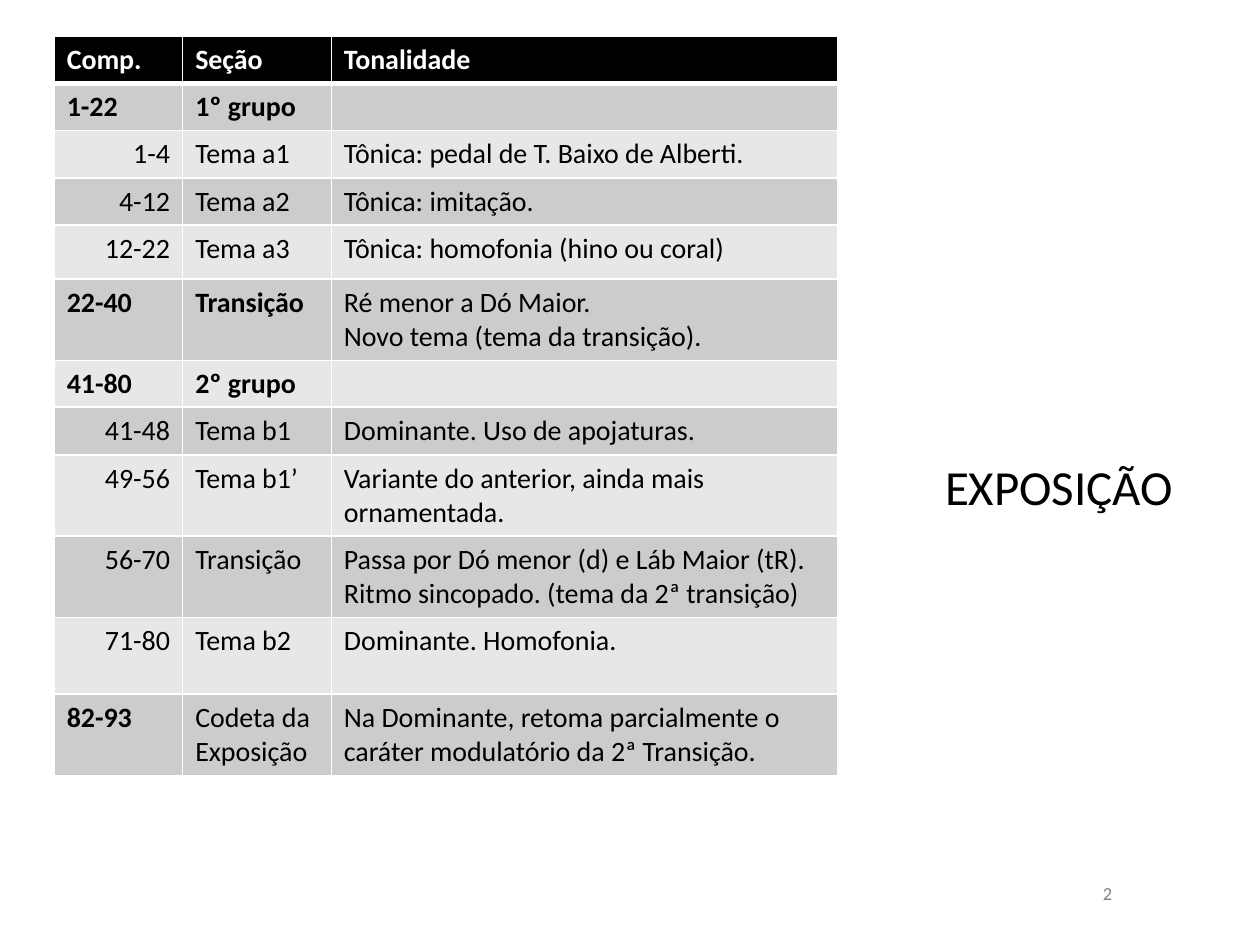
from lxml import etree
from pptx import Presentation
from pptx.dml.color import RGBColor
from pptx.enum.text import MSO_ANCHOR, PP_ALIGN
from pptx.oxml.ns import qn
from pptx.util import Inches, Pt

LEFT, CENTER, RIGHT = PP_ALIGN.LEFT, PP_ALIGN.CENTER, PP_ALIGN.RIGHT
MIDDLE = MSO_ANCHOR.MIDDLE

COLUMN_WIDTHS = [1.02, 1.18, 4.02]
HEADER = ("Comp.", "Seção", "Tonalidade")
SECTIONS = [
    (0.36, "1-22", "1º grupo", ""),
    (0.38, "1-4", "Tema a1", "Tônica: pedal de T. Baixo de Alberti."),
    (0.36, "4-12", "Tema a2", "Tônica: imitação."),
    (0.43, "12-22", "Tema a3", "Tônica: homofonia (hino ou coral)"),
    (0.6, "22-40", "Transição", "Ré menor a Dó Maior.\nNovo tema (tema da transição)."),
    (0.36, "41-80", "2º grupo", ""),
    (0.38, "41-48", "Tema b1", "Dominante. Uso de apojaturas."),
    (0.55, "49-56", "Tema b1’", "Variante do anterior, ainda mais ornamentada."),
    (0.61, "56-70", "Transição",
     "Passa por Dó menor (d) e Láb Maior (tR). Ritmo sincopado. (tema da 2ª transição)"),
    (0.61, "71-80", "Tema b2", "Dominante. Homofonia."),
    (0.61, "82-93", "Codeta da Exposição",
     "Na Dominante, retoma parcialmente o caráter modulatório da 2ª Transição."),
]
MAIN_SECTIONS = {"1-22", "22-40", "41-80", "82-93"}
BOLD_NAMES = {"1-22", "22-40", "41-80"}


def color(value):
    return RGBColor.from_string(value)


class SlideBuilder:
    font = "Calibri"
    black, white, gray = "000000", "FFFFFF", "808080"
    bands = ("CCCCCC", "E7E7E7")
    table_size = 16

    def __init__(self, page):
        self.page = page

    def set_text(self, frame, text, size, ink, align=LEFT, bold=False):
        frame.text = text
        for para in frame.paragraphs:
            para.alignment = align
            for span in para.runs:
                span.font.name = self.font
                span.font.size = Pt(size)
                span.font.bold = bold
                span.font.color.rgb = color(ink)
            if not para.runs:
                etree.SubElement(para._p, qn("a:endParaRPr"), sz=str(size * 100))

    def title(self, text, left, top, width, height):
        title = self.page.shapes.title
        title.left, title.top = Inches(left), Inches(top)
        title.width, title.height = Inches(width), Inches(height)
        frame = title.text_frame
        frame.vertical_anchor = MIDDLE
        frame.margin_top = Inches(0.52)
        self.set_text(frame, text, 28, self.black, RIGHT)

    def label(self, text, left, top, width, height):
        box = self.page.shapes.add_textbox(
            Inches(left), Inches(top), Inches(width), Inches(height))
        frame = box.text_frame
        frame.word_wrap = True
        frame.vertical_anchor = MIDDLE
        frame.margin_left = frame.margin_right = 0
        frame.margin_top = frame.margin_bottom = 0
        self.set_text(frame, text, 10.5, self.gray, CENTER)

    def borders(self, cell, top, bottom):
        properties = cell._tc.get_or_add_tcPr()
        widths = {"lnL": 1, "lnR": 1, "lnT": top, "lnB": bottom}
        for position, (side, width) in enumerate(widths.items()):
            line = etree.Element(qn(f"a:{side}"), w=str(Pt(width)))
            fill = etree.SubElement(line, qn("a:solidFill"))
            etree.SubElement(fill, qn("a:srgbClr"), val=self.white)
            properties.insert(position, line)

    def cell(self, cell, text, fill, ink, align, bold, top=1, bottom=1):
        cell.fill.solid()
        cell.fill.fore_color.rgb = color(fill)
        self.borders(cell, top, bottom)
        self.set_text(cell.text_frame, text, self.table_size, ink, align, bold)

    def table(self, left, top):
        heights = [0.36] + [section[0] for section in SECTIONS]
        table = self.page.shapes.add_table(
            len(heights), len(COLUMN_WIDTHS), Inches(left), Inches(top),
            Inches(sum(COLUMN_WIDTHS)), Inches(sum(heights))).table
        table.horz_banding = False
        for column, width in zip(table.columns, COLUMN_WIDTHS):
            column.width = Inches(width)
        for row, height in zip(table.rows, heights):
            row.height = Inches(height)
        for column, text in enumerate(HEADER):
            self.cell(table.cell(0, column), text, self.black, self.white,
                      LEFT, True, bottom=3)
        for row, (_, bars, name, key) in enumerate(SECTIONS, 1):
            main_section = bars in MAIN_SECTIONS
            styles = [(bars, LEFT if main_section else RIGHT, main_section),
                      (name, LEFT, bars in BOLD_NAMES),
                      (key, LEFT, False)]
            for column, (text, align, bold) in enumerate(styles):
                self.cell(table.cell(row, column), text, self.bands[(row - 1) % 2],
                          self.black, align, bold, top=3 if row == 1 else 1)


def main():
    deck = Presentation()
    deck.slide_width, deck.slide_height = Inches(10), Inches(7.5)
    builder = SlideBuilder(deck.slides.add_slide(deck.slide_layouts[5]))
    builder.table(0.43, 0.29)
    builder.title("EXPOSIÇÃO", 7.28, 0.5, 2.13, 6.25)
    builder.label("2", 8.5, 7, 0.58, 0.17)
    deck.save("out.pptx")


if __name__ == "__main__":
    main()
